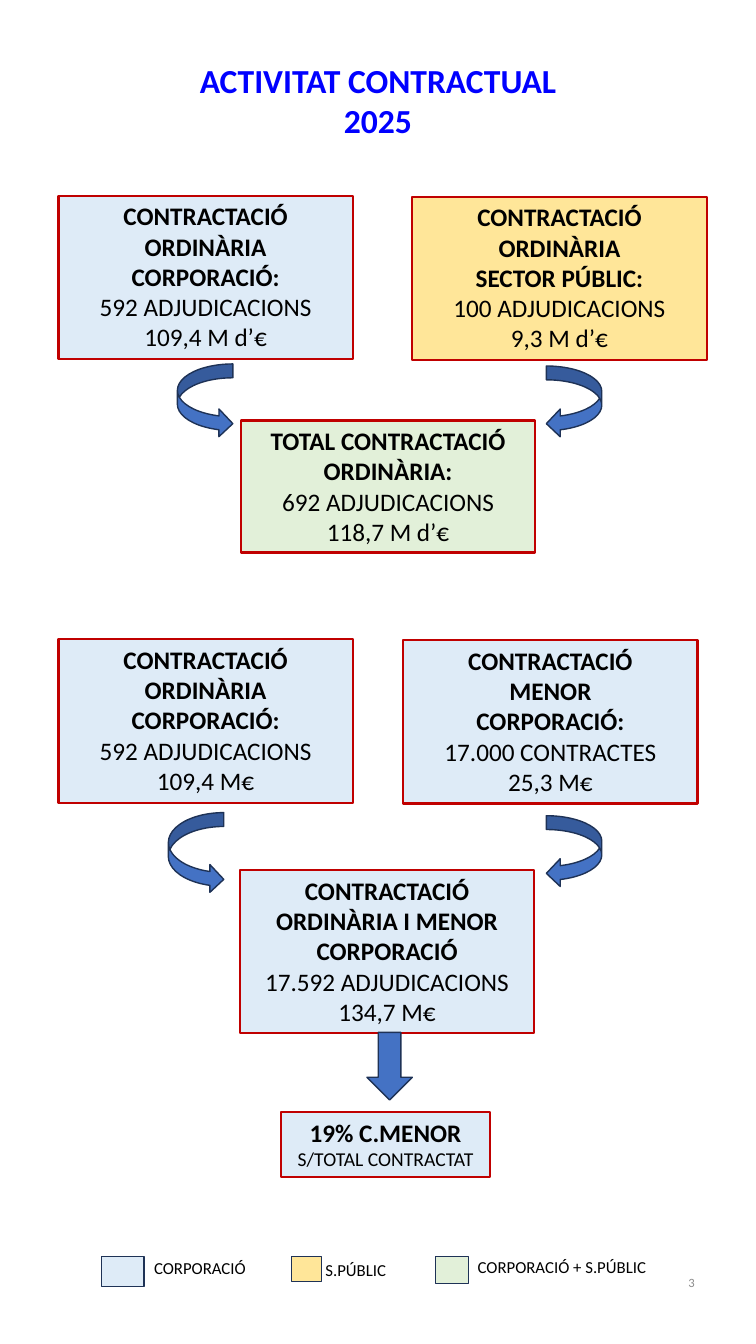
from pptx import Presentation
from pptx import util as u
from pptx.dml.color import RGBColor
from pptx.enum import shapes, text

PX = 9144
KIND = shapes.MSO_SHAPE
BLUE, GOLD, GREEN = "DEEBF7", "FFE699", "E2F0D9"
RED, NAVY, ARROW = "C00000", "1E3256", "4472C4"


def color(code):
    """Turn a hex string into a colour."""
    return RGBColor.from_string(code)


def place(box, x, y, w, h):
    """Give a px rectangle, offset from the corner of a box, in EMU."""
    return [u.Emu(n * PX) for n in (box[0] + x, box[1] + y, w, h)]


def write(frame, lines, size=18, ink="000000", bold=0, align="CENTER",
          anchor="TOP", grow=True, last=None):
    """Fill a frame with lines, the first few of them bold."""
    frame.word_wrap = True
    frame.vertical_anchor = getattr(text.MSO_ANCHOR, anchor)
    if grow:
        frame.auto_size = text.MSO_AUTO_SIZE.SHAPE_TO_FIT_TEXT
    for i, line in enumerate(lines):
        para = frame.paragraphs[0] if i == 0 else frame.add_paragraph()
        para.alignment = getattr(text.PP_ALIGN, align)
        run = para.add_run()
        run.text = line
        font = run.font
        font.name, font.bold = "Calibri", i < bold
        font.size = u.Pt(last if last and i == len(lines) - 1 else size)
        font.color.rgb = color(ink)


def label(slide, area, lines, **style):
    """Add a text box."""
    write(slide.shapes.add_textbox(*area).text_frame, lines, **style)


def shape(slide, kind, area, fill, edge=NAVY, width=1):
    """Add a flat filled shape with an outline."""
    item = slide.shapes.add_shape(kind, *area)
    item.shadow.inherit = False
    item.fill.solid()
    item.fill.fore_color.rgb = color(fill)
    item.line.color.rgb = color(edge)
    item.line.width = u.Pt(width)
    return item


def card(slide, area, fill, lines, bold, **style):
    """Add a red-edged card with a bold heading."""
    item = shape(slide, KIND.RECTANGLE, area, fill, RED, 1.5)
    write(item.text_frame, lines, bold=bold, **style)


def title(slide, box):
    """Add the heading."""
    label(slide, place(box, 0, 0, *box[2:]), ["ACTIVITAT CONTRACTUAL", "2025"],
          size=24, ink="0000FF", bold=2)


def flow(slide, box, cards, bends):
    """Add two cards that curved arrows join into a third."""
    for x, y, h, fill, bold, lines in cards:
        card(slide, place(box, x, y, 292, h), fill, lines, bold)
    kinds = KIND.CURVED_RIGHT_ARROW, KIND.CURVED_LEFT_ARROW
    for kind, (x, y, h) in zip(kinds, bends):
        shape(slide, kind, place(box, x, y, 55, h), ARROW)


def share(slide, box):
    """Add the down arrow and the card with the share."""
    shape(slide, KIND.DOWN_ARROW, place(box, 85, 0, 45, 67), ARROW)
    card(slide, place(box, 0, 79, 207, 64), BLUE,
         ["19% C.MENOR", "S/TOTAL CONTRACTAT"], 1, last=14)


def legend(slide, box):
    """Add the colour key."""
    keys = [
        (0, 42, 30, BLUE, 42, 1, 114, "CORPORACIÓ"),
        (188, 30, 25, GOLD, 212, 2, 105, "S.PÚBLIC"),
        (331, 33, 27, GREEN, 363, 0, 229, "CORPORACIÓ + S.PÚBLIC"),
    ]
    for x, w, h, fill, left, top, wide, name in keys:
        shape(slide, KIND.RECTANGLE, place(box, x, 4, w, h), fill)
        label(slide, place(box, left, top, wide, 30), [name],
              size=12, align="LEFT")


def number(slide, box):
    """Add the page number."""
    label(slide, place(box, 0, 0, *box[2:]), ["3"], size=9, ink="8C8C8C",
          align="RIGHT", anchor="MIDDLE", grow=False)


def main():
    """Build the slide and save it."""
    deck = Presentation()
    deck.slide_width, deck.slide_height = u.Emu(750 * PX), u.Emu(1333 * PX)
    slide = deck.slides.add_slide(deck.slide_layouts[6])
    title(slide, (121, 54, 508, 91))
    flow(slide, (58, 194, 643, 354), [
        (0, 0, 162, BLUE, 2, ["CONTRACTACIÓ ORDINÀRIA", "CORPORACIÓ:",
                              "592 ADJUDICACIONS", "109,4 M d’€"]),
        (351, 1, 162, GOLD, 2, ["CONTRACTACIÓ ORDINÀRIA", "SECTOR PÚBLIC:",
                                "100 ADJUDICACIONS", "9,3 M d’€"]),
        (181, 223, 131, GREEN, 1, ["TOTAL CONTRACTACIÓ ORDINÀRIA:",
                                   "692 ADJUDICACIONS", "118,7 M d’€"]),
    ], [(118, 167, 73), (484, 169, 71)])
    flow(slide, (58, 634, 634, 391), [
        (0, 0, 162, BLUE, 2, ["CONTRACTACIÓ ORDINÀRIA", "CORPORACIÓ:",
                              "592 ADJUDICACIONS", "109,4 M€"]),
        (342, 1, 162, BLUE, 3, ["CONTRACTACIÓ", "MENOR", "CORPORACIÓ:",
                                "17.000 CONTRACTES", "25,3 M€"]),
        (180, 229, 162, BLUE, 2, ["CONTRACTACIÓ ORDINÀRIA I MENOR",
                                  "CORPORACIÓ", "17.592 ADJUDICACIONS",
                                  "134,7 M€"]),
    ], [(109, 172, 80), (484, 175, 71)])
    share(slide, (279, 1024, 207, 143))
    legend(slide, (101, 1242, 592, 34))
    number(slide, (530, 1236, 169, 71))
    deck.save("out.pptx")


if __name__ == "__main__":
    main()
